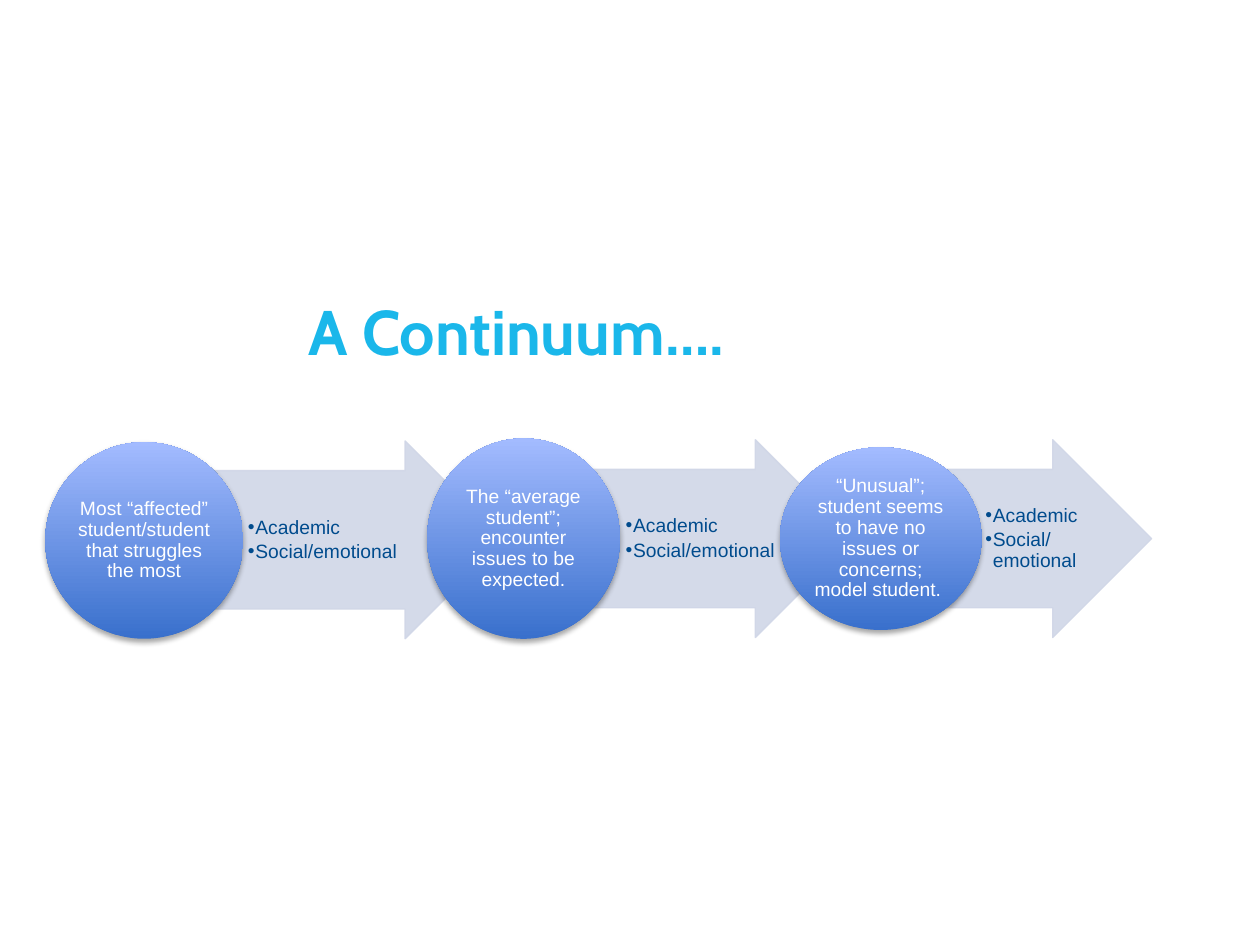
from lxml import etree
from pptx import Presentation
from pptx.dml.color import RGBColor
from pptx.enum.shapes import MSO_SHAPE
from pptx.enum.text import MSO_ANCHOR, PP_ALIGN
from pptx.oxml.ns import qn
from pptx.util import Inches, Pt

ARROW, ELLIPSE = MSO_SHAPE.RIGHT_ARROW, MSO_SHAPE.OVAL
TOP, MIDDLE = MSO_ANCHOR.TOP, MSO_ANCHOR.MIDDLE
LEFT, CENTER = PP_ALIGN.LEFT, PP_ALIGN.CENTER

CYAN, NAVY, WHITE, PALE = "1AB7EA", "004B8D", "FFFFFF", "D0D6E7"
DEEP_BLUE, LIGHT_BLUE = "3970CC", "A3BBFF"
BODY_FONT, TITLE_FONT = "Arial", "Cabin"
LINE_SPACING = 0.9
AREAS = ["Academic", "Social/emotional"]

# Circle text, circle box, arrow box, width of the area list
STAGES = [
    ("Most “affected” student/student that struggles the most",
     (0.36, 3.51, 1.57, 1.56), (1.25, 3.5, 2.75, 1.57), 1.51),
    ("The “average student”; encounter issues to be expected.",
     (3.39, 3.48, 1.53, 1.59), (4.32, 3.49, 2.46, 1.57), 1.29),
    ("“Unusual”; student seems to have no issues or concerns; model student. ",
     (6.19, 3.55, 1.6, 1.45), (7.34, 3.49, 1.8, 1.57), 0.88),
]


def rgb(value):
    return RGBColor.from_string(value)


def inches(box):
    return [Inches(length) for length in box]


def set_frame(frame, anchor, left=0.0, right=0.0, vertical=0.0):
    frame.word_wrap = True
    frame.vertical_anchor = anchor
    frame.margin_left, frame.margin_right = Inches(left), Inches(right)
    frame.margin_top = frame.margin_bottom = Inches(vertical)


def add_text(paragraph, text, color, size=11, font=BODY_FONT, bold=False, align=LEFT):
    paragraph.alignment = align
    paragraph.line_spacing = LINE_SPACING
    run = paragraph.add_run()
    run.text = text
    run.font.name, run.font.size, run.font.bold = font, Pt(size), bold
    run.font.color.rgb = rgb(color)


def add_bullet(paragraph):
    props = paragraph._p.get_or_add_pPr()
    props.set("marL", str(Inches(0.06)))
    props.set("indent", str(-Inches(0.06)))
    etree.SubElement(props, qn("a:buFont")).set("typeface", BODY_FONT)
    etree.SubElement(props, qn("a:buChar")).set("char", "•")


def set_alpha(color, percent):
    etree.SubElement(color, qn("a:alpha")).set("val", str(percent * 1000))


def add_title(slide):
    title = slide.shapes.title
    title.left, title.top, title.width, title.height = inches((2.45, 2.39, 7.05, 1.89))
    set_frame(title.text_frame, TOP)
    add_text(title.text_frame.paragraphs[0], "A Continuum….", CYAN, 36, TITLE_FONT, True)


def add_arrow(slide, box):
    arrow = slide.shapes.add_shape(ARROW, *inches(box))
    arrow.shadow.inherit = False
    arrow.adjustments[0], arrow.adjustments[1] = 0.7, 0.5
    arrow.line.width = Pt(0.75)
    for fill in (arrow.fill, arrow.line.fill):
        fill.solid()
        fill.fore_color.rgb = rgb(PALE)
    for color in arrow._element.spPr.iter(qn("a:srgbClr")):
        set_alpha(color, 90)


def add_areas(slide, arrow_box, list_width):
    left, top, width, height = arrow_box
    # The list starts a quarter of the way along and spans the arrow's shaft
    box = (left + width / 4, top + 0.15 * height, list_width, 0.7 * height)
    frame = slide.shapes.add_textbox(*inches(box)).text_frame
    set_frame(frame, MIDDLE, left=0.03, right=0.02, vertical=0.01)
    for index, area in enumerate(AREAS):
        paragraph = frame.add_paragraph() if index else frame.paragraphs[0]
        add_bullet(paragraph)
        paragraph.level = 1
        paragraph.space_after = Pt(2)
        paragraph.font.size = Pt(11)
        add_text(paragraph, area, NAVY)


def add_circle(slide, text, box):
    circle = slide.shapes.add_shape(ELLIPSE, *inches(box))
    circle.line.fill.background()
    circle.fill.gradient()
    circle.fill.gradient_angle = 90
    for stop, color in zip(circle.fill.gradient_stops, (DEEP_BLUE, LIGHT_BLUE)):
        stop.color.rgb = rgb(color)

    # Soft shadow straight below
    circle.shadow.inherit = False
    effects = circle._element.spPr.find(qn("a:effectLst"))
    shadow = etree.SubElement(effects, qn("a:outerShdw"), blurRad=str(Pt(3.1)),
                              dist=str(Pt(1.8)), dir="5400000", rotWithShape="0")
    set_alpha(etree.SubElement(shadow, qn("a:srgbClr"), val="000000"), 35)

    set_frame(circle.text_frame, MIDDLE, 0.01, 0.01, 0.01)
    add_text(circle.text_frame.paragraphs[0], text, WHITE, align=CENTER)


def main():
    deck = Presentation()
    deck.slide_width, deck.slide_height = Inches(10), Inches(7.5)
    slide = deck.slides.add_slide(deck.slide_layouts[5])
    add_title(slide)
    for text, circle_box, arrow_box, list_width in STAGES:
        add_arrow(slide, arrow_box)
        add_areas(slide, arrow_box, list_width)
        add_circle(slide, text, circle_box)
    deck.save("out.pptx")


if __name__ == "__main__":
    main()
